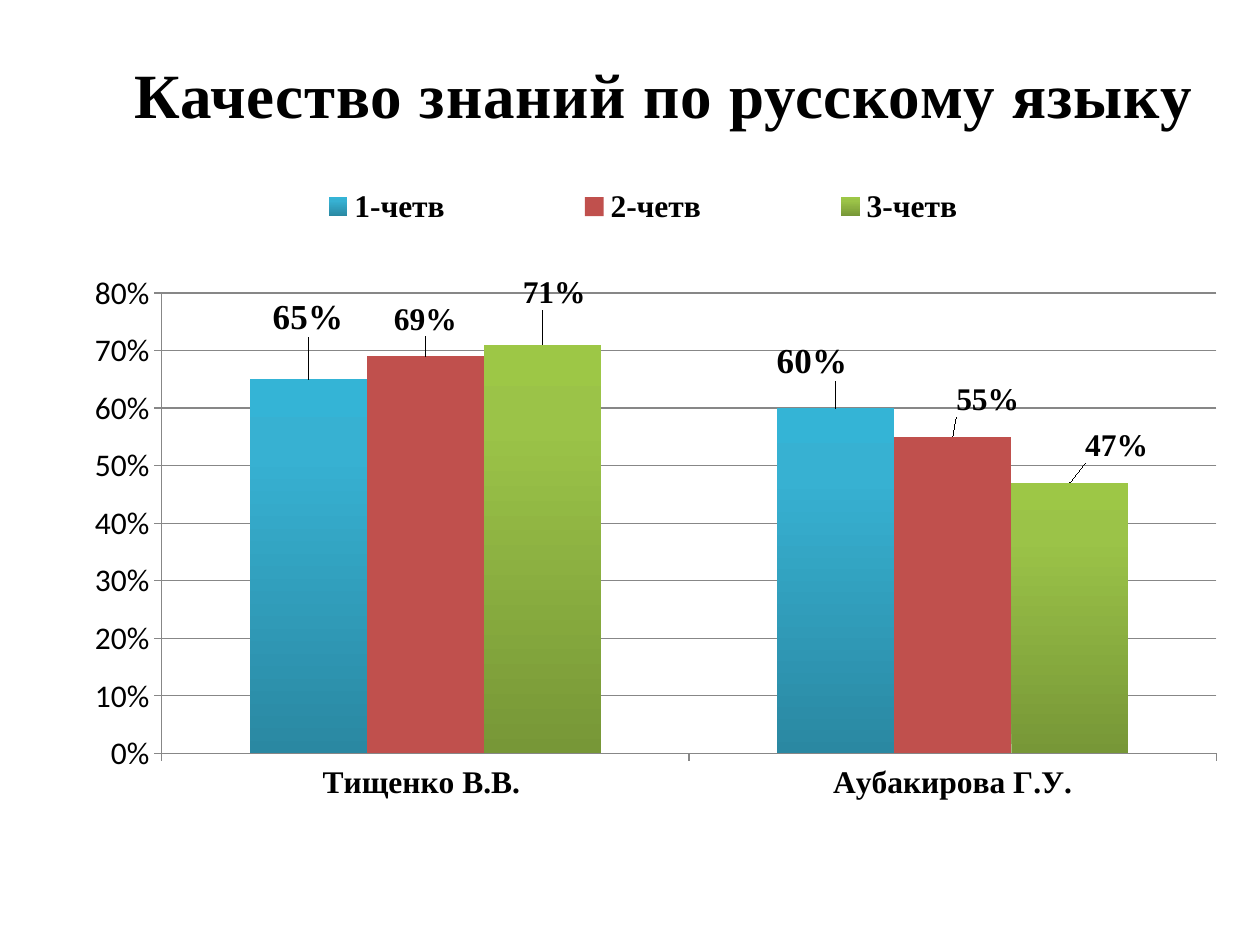
from dataclasses import dataclass

from lxml import etree
from pptx import Presentation
from pptx import util as u
from pptx.chart.data import CategoryChartData
from pptx.dml.color import RGBColor
from pptx.enum import chart as c, text as t
from pptx.oxml import ns

PX = 914400 / 126
SERIF = "Times New Roman"
BLACK = "000000"
GREY = "878787"
CATEGORIES = ["Тищенко В.В. ", "Аубакирова Г.У."]


@dataclass
class Quarter:
    name: str
    values: list[float]
    colors: list[str]  # one solid colour, or gradient stops from the bottom up
    label_size: int
    label_shifts: list[tuple[float, float]]  # fractions of the chart size


QUARTERS = [
    Quarter("1-четв", [0.65, 0.6], ["2A88A2", "37B1D2", "34B4D6"], 20,
            [(0, -0.05), (-0.02, -0.03)]),
    Quarter("2-четв", [0.69, 0.55], ["C0504D"], 18,
            [(0, -0.02), (0.03, -0.02)]),
    Quarter("3-четв", [0.71, 0.47], ["779737", "9BC348", "9DC746"], 18,
            [(0.01, -0.04), (0.04, -0.02)]),
]


def px(length: int) -> int:
    return round(length * PX)


def color(value: str) -> RGBColor:
    return RGBColor.from_string(value)


def style(font, size=18, name=SERIF, bold=True, fill=BLACK) -> None:
    font.size, font.name, font.bold = u.Pt(size), name, bold
    font.color.rgb = color(fill)


def write(shape, words: str, *, spacing: int = 0, **format_) -> None:
    para = shape.text_frame.paragraphs[0]
    para.alignment = t.PP_ALIGN.CENTER
    span = para.add_run()
    span.text = words
    style(span.font, **format_)
    span.font._element.set("spc", str(spacing))


def node(parent, tag: str, **attributes):
    return etree.SubElement(parent, ns.qn(tag), attributes)


def place(parent, after: str = "", **values) -> None:
    """Put a manual layout into a chart element, after the named child."""
    for old in parent.findall(ns.qn("c:layout")):
        parent.remove(old)
    layout = etree.Element(ns.qn("c:layout"))
    manual = node(layout, "c:manualLayout")
    for tag, value in values.items():
        node(manual, f"c:{tag}", val=str(value))
    if after:
        parent.find(ns.qn(after)).addnext(layout)
    else:
        parent.insert(0, layout)


def paint(series, colors: list[str]) -> None:
    fill = series.format.fill
    if len(colors) == 1:
        fill.solid()
        fill.fore_color.rgb = color(colors[0])
        return
    fill.gradient()
    fill.gradient_angle = 90
    stops = series._element.find(".//" + ns.qn("a:gsLst"))
    for old in list(stops):
        stops.remove(old)
    for position, value in zip((0, 80, 100), colors):
        node(node(stops, "a:gs", pos=str(position * 1000)), "a:srgbClr", val=value)


def label_bars(series, quarter: Quarter) -> None:
    labels = series.data_labels
    labels.show_value = True
    labels.number_format, labels.number_format_is_linked = "0%", False
    style(labels.font, quarter.label_size)
    for index in range(len(quarter.values)):
        label = series.points[index].data_label
        style(label.font, quarter.label_size)
        label.position = c.XL_LABEL_POSITION.OUTSIDE_END
    found = series._element.findall(".//" + ns.qn("c:dLbl"))
    for element, (dx, dy) in zip(found, quarter.label_shifts):
        place(element, "c:idx", x=dx, y=dy)


def format_axis(axis, **format_) -> None:
    style(axis.tick_labels.font, **format_)
    axis.major_tick_mark = c.XL_TICK_MARK.OUTSIDE
    format_line(axis)


def format_line(item) -> None:
    item.format.line.color.rgb = color(GREY)
    item.format.line.width = u.Pt(0.75)


def add_quality_chart(page) -> None:
    data = CategoryChartData(number_format="0%")
    data.categories = CATEGORIES
    for quarter in QUARTERS:
        data.add_series(quarter.name, quarter.values)
    chart = page.shapes.add_chart(c.XL_CHART_TYPE.COLUMN_CLUSTERED, px(59), px(155),
                                  px(1168), px(738), data).chart
    chart.has_title = False
    style(chart.font, name="Calibri", bold=False)

    # Bars
    plot = chart.plots[0]
    plot.gap_width, plot.overlap, plot.vary_by_categories = 150, 0, False
    for series, quarter in zip(plot.series, QUARTERS):
        series.invert_if_negative = False
        paint(series, quarter.colors)
        label_bars(series, quarter)

    # Axes
    format_axis(chart.category_axis)
    axis = chart.value_axis
    format_axis(axis, name="Calibri", bold=False)
    axis.minimum_scale, axis.maximum_scale, axis.major_unit = 0, 0.8, 0.1
    axis.tick_labels.number_format = "0%"
    axis.tick_labels.number_format_is_linked = False
    axis.has_major_gridlines = True
    format_line(axis.major_gridlines)

    # Legend above the plot
    chart.has_legend = True
    legend = chart.legend
    legend.position = c.XL_LEGEND_POSITION.RIGHT
    legend.include_in_layout = False
    style(legend.font)
    place(legend._element, "c:legendPos", xMode="edge", yMode="edge",
          x=0.12, y=0.02, w=0.76, h=0.1)
    plot_area = plot._element.getparent()
    place(plot_area, layoutTarget="inner", xMode="edge", yMode="edge",
          x=0.088, y=0.187, w=0.903, h=0.624)


def add_title(page) -> None:
    title = page.shapes.title
    title.left, title.top, title.width, title.height = map(px, (59, 49, 1210, 89))
    title.text_frame.word_wrap = True
    title.text_frame.vertical_anchor = t.MSO_ANCHOR.TOP
    write(title, "Качество знаний по русскому языку", size=36, spacing=50)


def main() -> None:
    deck = Presentation()
    deck.slide_width, deck.slide_height = px(1260), px(945)
    page = deck.slides.add_slide(deck.slide_layouts[5])
    add_quality_chart(page)
    add_title(page)
    deck.save("out.pptx")


if __name__ == "__main__":
    main()
